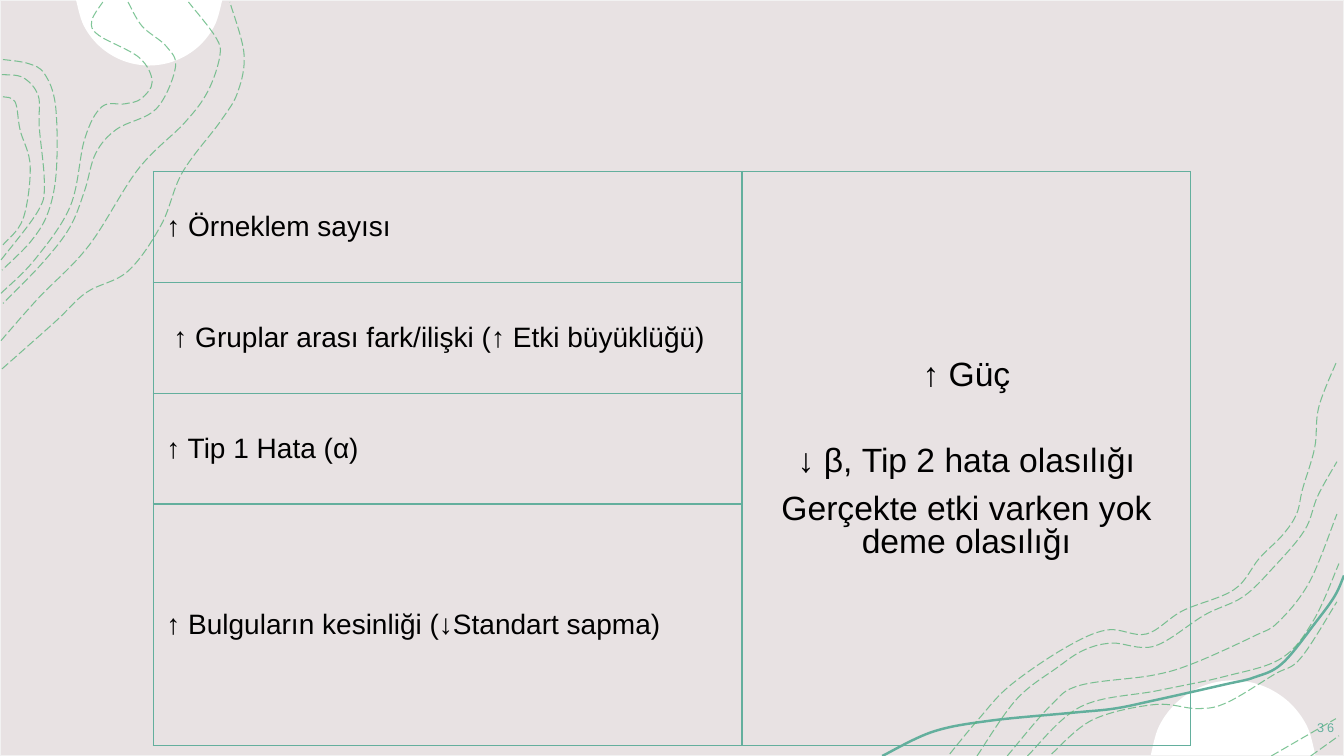
import math
from dataclasses import dataclass

import pptx
import pptx.dml.color
import pptx.enum.dml
import pptx.enum.shapes
import pptx.enum.text
import pptx.oxml
import pptx.oxml.ns
import pptx.util
from pptx.util import Inches

ALIGN = pptx.enum.text.PP_ALIGN
MIDDLE = pptx.enum.text.MSO_ANCHOR.MIDDLE
NAMESPACE = pptx.oxml.ns.nsdecls("a")


@dataclass(frozen=True)
class Theme:
    font: str = "Arial"
    ground: str = "E8E2E3"
    frame: str = "F2F2F2"
    moon: str = "FFFFFF"
    accent: str = "63AF9D"
    contour: str = "56B376"
    text: str = "000000"
    factor_size: int = 20
    result_size: int = 24
    number_size: int = 9


THEME = Theme()

# Points that each contour line passes through, in inches
UPPER_CONTOURS = [
    [(0.02, 3.66), (0.55, 3.19), (0.86, 2.9), (1.27, 2.69), (1.6, 2.23), (1.81, 1.71),
     (2.19, 1.2), (2.36, 0.91), (2.42, 0.53), (2.28, 0.02)],
    [(0.01, 3.38), (0.38, 2.96), (0.88, 2.44), (1.37, 1.68), (1.83, 1.22), (2.06, 0.91),
     (2.18, 0.56), (2.14, 0.37), (1.87, 0.02)],
    [(1.27, 0.02), (1.41, 0.26), (1.65, 0.46), (1.74, 0.67), (1.55, 1.08), (1.16, 1.28),
     (0.95, 1.52), (0.84, 1.89), (0.69, 2.26), (0.42, 2.61), (0.03, 3.01)],
    [(0.01, 2.91), (0.35, 2.57), (0.7, 2.04), (0.84, 1.38), (1.01, 1.06), (1.24, 1.03),
     (1.4, 0.98), (1.51, 0.81), (1.38, 0.57), (0.98, 0.35), (0.91, 0.21), (1.02, 0.02)],
    [(0.03, 0.59), (0.28, 0.63), (0.44, 0.73), (0.55, 1.04), (0.56, 1.68), (0.48, 2.1),
     (0.31, 2.39), (0.02, 2.68)],
    [(0.02, 0.74), (0.23, 0.77), (0.38, 0.95), (0.39, 1.26), (0.44, 1.81), (0.38, 2.09),
     (0.01, 2.58)],
    [(0.03, 0.96), (0.15, 1.01), (0.2, 1.29), (0.3, 1.65), (0.23, 2.17), (0.03, 2.43)],
]
LOWER_CONTOURS = [
    [(9.42, 7.48), (9.71, 7.13), (10.02, 6.8), (10.56, 6.43), (10.98, 6.25), (11.37, 6.29),
     (11.73, 6.06), (12.24, 5.85), (12.49, 5.54), (12.72, 5.31), (12.86, 5.1), (12.92, 4.85),
     (13.04, 4.44), (13.08, 4.04), (13.26, 3.58)],
    [(9.69, 7.5), (10.08, 6.94), (10.49, 6.62), (10.75, 6.45), (11.03, 6.38), (11.45, 6.41),
     (11.95, 6.1), (12.33, 5.92), (12.63, 5.63), (12.94, 5.26), (13.07, 4.92), (13.26, 4.58)],
    [(13, 7.5), (13.28, 7.3)],
    [(12.61, 7.5), (13.25, 7.13)],
    [(10.43, 7.48), (10.84, 7.14), (11.45, 6.99), (11.88, 7.03), (12.17, 6.97), (12.64, 6.69),
     (12.9, 6.53), (13.26, 5.97)],
    [(10.19, 7.5), (10.72, 7.01), (11.49, 6.85), (12.15, 6.71), (12.71, 6.53), (13.03, 6.15),
     (13.28, 5.59)],
    [(9.99, 7.5), (10.42, 7), (10.71, 6.8), (11.43, 6.7), (11.84, 6.58), (12.44, 6.31),
     (12.68, 6.17), (12.99, 5.77), (13.26, 5.1)],
]
BOLD_CONTOUR = [
    (8.75, 7.5), (9.25, 7.26), (9.82, 7.15), (10.65, 7.07), (11.05, 7.03), (11.44, 6.95),
    (12.15, 6.79), (12.44, 6.72), (12.72, 6.58), (13.06, 6.16), (13.24, 5.91), (13.33, 5.71)]

FACTORS = ["↑ Örneklem sayısı", "↑ Gruplar arası fark/ilişki (↑ Etki büyüklüğü)",
           "↑ Tip 1 Hata (α)", "↑ Bulguların kesinliği (↓Standart sapma)"]
# Text, space before, line spacing
RESULTS = [("↑ Güç", 0, 1), ("↓ β, Tip 2 hata olasılığı", 37, 0.9),
           ("Gerçekte etki varken yok deme olasılığı", 10, 0.9)]


def color(value):
    return pptx.dml.color.RGBColor.from_string(value)


def bend(shape):
    """Turn the straight segments into curves through the same points."""
    outline = shape._element.find(".//" + pptx.oxml.ns.qn("a:path"))
    nodes = [(int(node.get("x")), int(node.get("y")))
             for node in outline.iter(pptx.oxml.ns.qn("a:pt"))]
    padded = [nodes[0], *nodes, nodes[-1]]
    lines = outline.findall(pptx.oxml.ns.qn("a:lnTo"))
    for line, a, b, c, d in zip(lines, padded, padded[1:], padded[2:], padded[3:]):
        leave = [b[i] + (c[i] - a[i]) / 6 for i in (0, 1)]
        arrive = [c[i] - (d[i] - b[i]) / 6 for i in (0, 1)]
        handles = "".join(f'<a:pt x="{round(x)}" y="{round(y)}"/>'
                          for x, y in (leave, arrive, c))
        outline.replace(line, pptx.oxml.parse_xml(
            f"<a:cubicBezTo {NAMESPACE}>{handles}</a:cubicBezTo>"))


def add_curve(shapes, points, close=False):
    corners = [(Inches(x), Inches(y)) for x, y in points]
    builder = shapes.build_freeform(*corners[0], scale=1.0)
    builder.add_line_segments(corners[1:], close=close)
    shape = builder.convert_to_shape()
    shape.shadow.inherit = False
    bend(shape)
    return shape


def add_contour(shapes, points, line_color, width, dashed=True):
    shape = add_curve(shapes, points)
    shape.fill.background()
    shape.line.color.rgb = color(line_color)
    shape.line.width = pptx.util.Pt(width)
    if dashed:
        shape.line.dash_style = pptx.enum.dml.MSO_LINE.LONG_DASH
        rgb = shape.line._ln.find(".//" + pptx.oxml.ns.qn("a:srgbClr"))
        rgb.append(pptx.oxml.parse_xml(f'<a:alpha {NAMESPACE} val="75000"/>'))


def add_moon(slide, center_x, edge_y, radius, direction):
    """Add a disc cut off 0.08 inches from its centre by the slide edge."""
    half_angle = math.acos(0.08 / radius)
    angles = [half_angle * i / 4 for i in range(-4, 5)]
    points = [(center_x + radius * math.sin(angle),
               edge_y + direction * (radius * math.cos(angle) - 0.08)) for angle in angles]
    shape = add_curve(slide.shapes, points, close=True)
    shape.fill.solid()
    shape.fill.fore_color.rgb = color(THEME.moon)
    shape.line.fill.background()


def add_ground(slide, width, height):
    shape = slide.shapes.add_shape(pptx.enum.shapes.MSO_SHAPE.RECTANGLE, 0, 0, width, height)
    shape.shadow.inherit = False
    shape.fill.solid()
    shape.fill.fore_color.rgb = color(THEME.ground)
    shape.line.color.rgb = color(THEME.frame)
    shape.line.width = pptx.util.Pt(1)


def format_paragraph(paragraph, size, text_color, alignment):
    paragraph.alignment = alignment
    for run in paragraph.runs:
        run.font.name = THEME.font
        run.font.size = pptx.util.Pt(size)
        run.font.color.rgb = color(text_color)


def set_margins(target, size):
    target.margin_left = target.margin_right = Inches(size)
    target.margin_top = target.margin_bottom = Inches(size)


def add_page_number(slide, number):
    shape = slide.shapes.add_textbox(Inches(12.53), Inches(6.93), Inches(0.8), Inches(0.57))
    frame = shape.text_frame
    frame.word_wrap = True
    frame.vertical_anchor = MIDDLE
    set_margins(frame, 0.1)
    frame.text = number
    format_paragraph(frame.paragraphs[0], THEME.number_size, THEME.accent, ALIGN.RIGHT)
    frame.paragraphs[0].runs[0].font._element.set("spc", "200")


def style_cell(cell):
    cell.fill.background()
    cell.vertical_anchor = MIDDLE
    set_margins(cell, 0.13)
    for index, side in enumerate(("lnL", "lnR", "lnT", "lnB")):
        cell._tc.get_or_add_tcPr().insert(index, pptx.oxml.parse_xml(
            f'<a:{side} {NAMESPACE} w="12700"><a:solidFill>'
            f'<a:srgbClr val="{THEME.accent}"/></a:solidFill></a:{side}>'))


def add_power_table(slide):
    widths, heights = [5.84, 4.45], [1.1, 1.1, 1.1, 2.29]
    table = slide.shapes.add_table(len(heights), len(widths), Inches(1.52), Inches(1.7),
                                   Inches(sum(widths)), Inches(sum(heights))).table
    table.first_row = table.horz_banding = False
    for column, width in zip(table.columns, widths):
        column.width = Inches(width)
    for row, height in zip(table.rows, heights):
        row.height = Inches(height)
    for cell in table.iter_cells():
        style_cell(cell)

    # Factors on the left
    for index, factor in enumerate(FACTORS):
        cell = table.cell(index, 0)
        cell.text = factor
        format_paragraph(cell.text_frame.paragraphs[0], THEME.factor_size, THEME.text, ALIGN.LEFT)
    table.cell(1, 0).margin_left = Inches(0.2)

    # Their joint result on the right
    result = table.cell(0, 1)
    result.merge(table.cell(len(heights) - 1, 1))
    result.text = "\n".join(text for text, _, _ in RESULTS)
    for paragraph, (_, before, spacing) in zip(result.text_frame.paragraphs, RESULTS):
        format_paragraph(paragraph, THEME.result_size, THEME.text, ALIGN.CENTER)
        paragraph.line_spacing = spacing
        if before:
            paragraph.space_before = pptx.util.Pt(before)


def main():
    presentation = pptx.Presentation()
    presentation.slide_width, presentation.slide_height = Inches(13.33), Inches(7.5)
    slide = presentation.slides.add_slide(presentation.slide_layouts[6])

    # Backdrop
    add_ground(slide, presentation.slide_width, presentation.slide_height)
    add_moon(slide, 1.48, 0, 0.73, 1)
    add_moon(slide, 12.23, 7.49, 0.82, -1)
    add_contour(slide.shapes, BOLD_CONTOUR, THEME.accent, 1.75, dashed=False)
    for contours in (UPPER_CONTOURS, LOWER_CONTOURS):
        group = slide.shapes.add_group_shape()
        for points in contours:
            add_contour(group.shapes, points, THEME.contour, 0.75)

    # Content
    add_page_number(slide, "36")
    add_power_table(slide)
    presentation.save("out.pptx")


if __name__ == "__main__":
    main()
